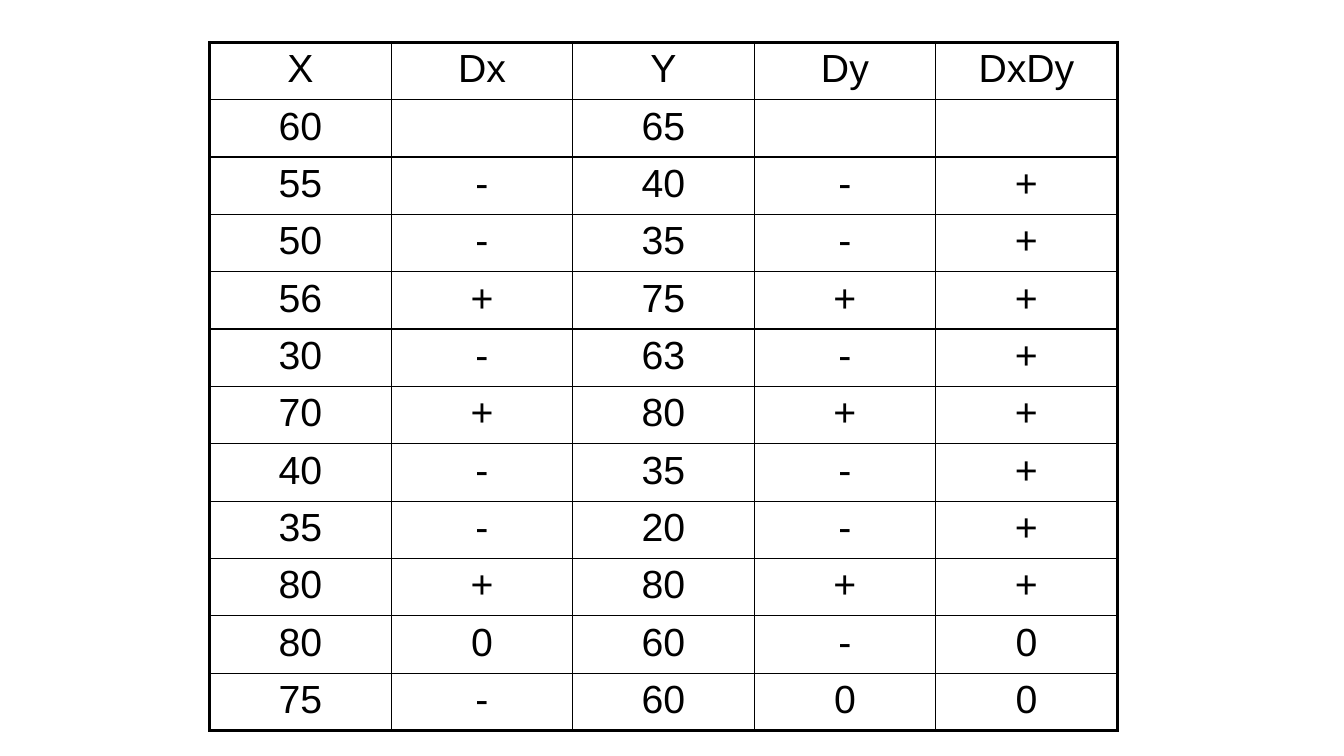
from lxml.etree import SubElement
from pptx import Presentation
from pptx.dml.color import RGBColor
from pptx.enum.text import PP_ALIGN
from pptx.oxml.ns import qn
from pptx.util import Inches, Pt

BLACK = RGBColor(0, 0, 0)
ROWS = [
    ("X", "Dx", "Y", "Dy", "DxDy"),
    ("60", "", "65", "", ""),
    ("55", "-", "40", "-", "+"),
    ("50", "-", "35", "-", "+"),
    ("56", "+", "75", "+", "+"),
    ("30", "-", "63", "-", "+"),
    ("70", "+", "80", "+", "+"),
    ("40", "-", "35", "-", "+"),
    ("35", "-", "20", "-", "+"),
    ("80", "+", "80", "+", "+"),
    ("80", "0", "60", "-", "0"),
    ("75", "-", "60", "0", "0"),
]


class SlideBuilder:
    font = {"name": "Arial", "size": Pt(28), "bold": False}
    color = BLACK
    inner, outer = Pt(1), Pt(2.25)

    def __init__(self, s):
        self.s = s

    def table(self, rows, left, top, width, height):
        n_rows, n_cols = len(rows), len(rows[0])
        frame = self.s.shapes.add_table(
            n_rows, n_cols, Inches(left), Inches(top), Inches(width), Inches(height))
        tbl = frame.table
        for i, row in enumerate(rows):
            for j, text in enumerate(row):
                cell = tbl.cell(i, j)
                self.borders(cell, {"lnL": j == 0, "lnR": j == n_cols - 1,
                                    "lnT": i == 0, "lnB": i == n_rows - 1})
                cell.fill.background()
                if text:
                    self.text(cell.text_frame, text)

    def borders(self, cell, edges):
        tcPr = cell._tc.get_or_add_tcPr()
        for tag, is_edge in edges.items():
            ln = SubElement(tcPr, qn(f"a:{tag}"), w=str(self.outer if is_edge else self.inner))
            fill = SubElement(ln, qn("a:solidFill"))
            SubElement(fill, qn("a:srgbClr"), val=str(self.color))

    def text(self, tf, text):
        p = tf.paragraphs[0]
        p.alignment = PP_ALIGN.CENTER
        before = SubElement(p._p.get_or_add_pPr(), qn("a:spcBef"))
        SubElement(before, qn("a:spcPct"), val="20000")
        r = p.add_run()
        r.text = text
        for name, value in self.font.items():
            setattr(r.font, name, value)
        r.font.color.rgb = self.color


def main():
    prs = Presentation()
    prs.slide_width, prs.slide_height = Inches(13.33), Inches(7.5)
    s = prs.slides.add_slide(prs.slide_layouts[6])
    SlideBuilder(s).table(ROWS, 2.08, 0.42, 9, 6.83)
    prs.save("out.pptx")


if __name__ == "__main__":
    main()
